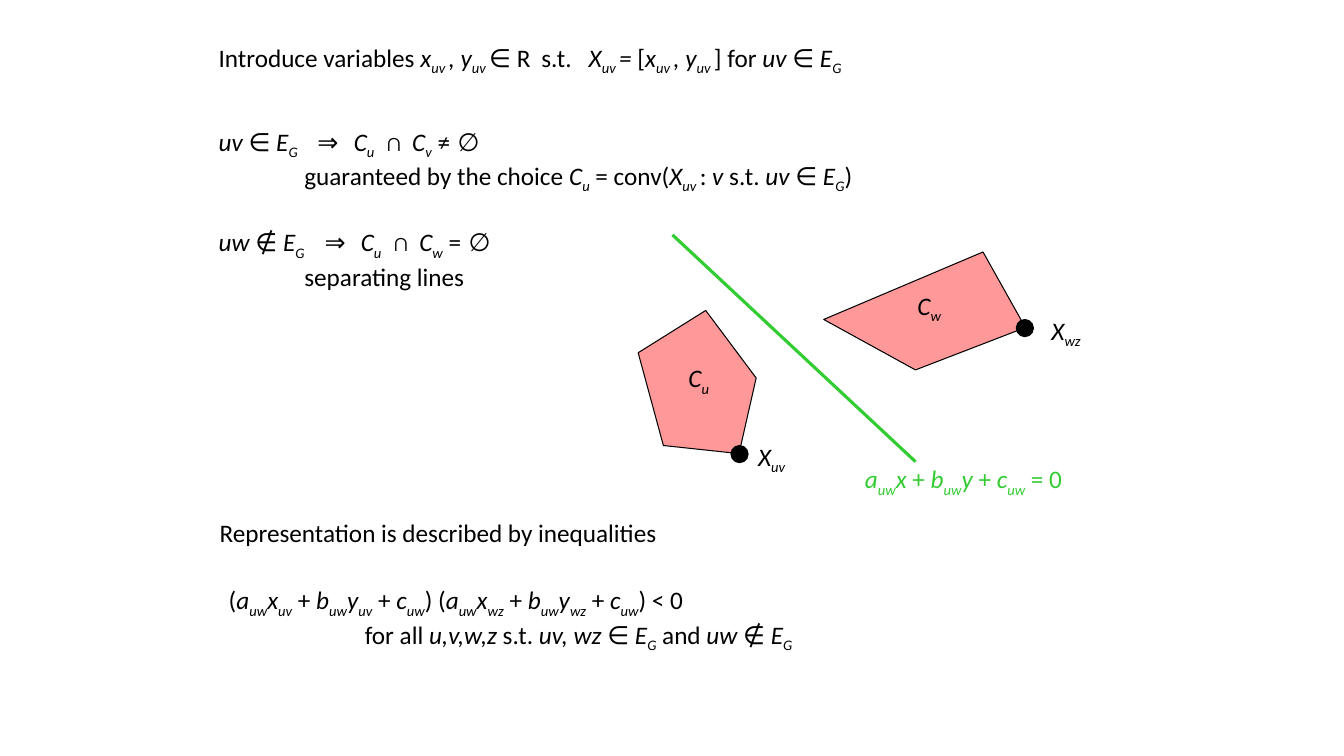
"""Build a slide on representing a graph by convex sets with separating lines."""
from lxml.etree import SubElement
from pptx import Presentation
from pptx.dml.color import RGBColor
from pptx.enum.shapes import MSO_CONNECTOR as Connector, MSO_SHAPE as Preset
from pptx.enum.text import MSO_AUTO_SIZE as AutoSize
from pptx.oxml.ns import qn
from pptx.util import Inches, Pt

BLACK = RGBColor(0, 0, 0)
PINK = RGBColor(0xFF, 0x99, 0x99)
GREEN = RGBColor(0x33, 0xCC, 0x33)

deck = Presentation()
deck.slide_width, deck.slide_height = Inches(13.33), Inches(7.5)
page = deck.slides.add_slide(deck.slide_layouts[6])
shapes = page.shapes


def add_text(left, top, width, lines, color=BLACK):
    """Add lines of (markup, indent, tab stops): *italic* and {subscript}."""
    height = 0.4 if len(lines) == 1 else 0.71
    box = shapes.add_textbox(Inches(left), Inches(top), Inches(width), Inches(height))
    frame = box.text_frame
    frame.word_wrap = False
    frame.auto_size = AutoSize.SHAPE_TO_FIT_TEXT
    for number, (markup, indent, stops) in enumerate(lines):
        para = frame.add_paragraph() if number else frame.paragraphs[0]
        properties = para._p.get_or_add_pPr()
        if indent:
            properties.set("marL", str(Inches(indent)))
            properties.set("indent", "0")
        if stops:
            tab_list = SubElement(properties, qn("a:tabLst"))
            for stop in stops:
                SubElement(tab_list, qn("a:tab"), pos=str(Inches(stop)), algn="l")
        para.font.size, para.font.name = Pt(18), "Calibri"
        for chunk_number, chunk in enumerate(markup.split("*")):
            for part_number, part in enumerate(chunk.replace("}", "{").split("{")):
                if part:
                    span = para.add_run()
                    span.text = part
                    span.font.italic = chunk_number % 2 == 1
                    span.font.color.rgb = color
                    if part_number % 2:
                        span._r.get_or_add_rPr().set("baseline", "-25000")


def paint(shape, fill):
    """Give a shape a plain fill and a thin black outline."""
    shape.shadow.inherit = False
    shape.fill.solid()
    shape.fill.fore_color.rgb = fill
    shape.line.color.rgb = BLACK
    shape.line.width = Pt(0.75)


add_text(2.07, 0.37, 6.51, [
    ("Introduce variables *x{uv }, y{uv }*∈ R\ts.t.\t*X{uv }= *[*x{uv }, y{uv }*] for "
     "*uv *∈* E{G}*", 0, (3.2, 3.67))])
add_text(2.07, 1.2, 6.65, [
    ("*uv *∈* E{G}*\t⇒\t*C{u}*\t∩\t*C{v}* ≠\t*∅*", 0, (0.98, 1.34, 1.65, 1.92, 2.37)),
    ("guaranteed by the choice *C{u}* = conv(*X{uv }*: *v *s.t.* uv *∈* E{G}*)", 0.85, ())])
add_text(2.07, 2.2, 3.09, [
    ("*uw *∉* E{G}*\t⇒\t*C{u}*\t∩\t*C{w}* =\t*∅*", 0, (1.05, 1.41, 1.72, 1.99, 2.48)),
    ("separating lines", 0.85, ())])

set_u = [(6.58, 4.42), (6.33, 3.5), (7, 3.08), (7.5, 3.75), (7.33, 4.5)]
set_w = [(9.08, 3.67), (8.17, 3.17), (9.75, 2.5), (10.17, 3.25)]
for corners in (set_u, set_w):
    points = [(Inches(x), Inches(y)) for x, y in corners]
    outline = shapes.build_freeform(*points[0])
    outline.add_line_segments(points[1:], close=True)
    paint(outline.convert_to_shape(), PINK)

separator = shapes.add_connector(
    Connector.STRAIGHT, Inches(6.67), Inches(2.33), Inches(9.08), Inches(4.58))
separator.line.color.rgb = GREEN
separator.line.width = Pt(2.25)
SubElement(separator._element.spPr, qn("a:effectLst"))
add_text(8.48, 4.55, 2.26, [("*a{uw}x* + *b{uw}y* + *c{uw}* = 0", 0, ())], GREEN)

add_text(2.08, 5.08, 4.59, [("Representation is described by inequalities", 0, ())])
factors = "".join(f"(*a{{uw}}x{{{edge}}}* + *b{{uw}}y{{{edge}}}* + *c{{uw}}*) "
                  for edge in ("uv", "wz"))
add_text(2.17, 5.75, 5.9, [
    (factors + "< 0", 0, ()),
    ("for all *u,v,w,z* s.t. *uv, wz *∈* E{G}* and *uw *∉* E{G}*", 1.35, ())])

for left, top in ((7.25, 4.42), (10.08, 3.17)):
    dot = shapes.add_shape(Preset.OVAL, Inches(left), Inches(top), Inches(0.17), Inches(0.17))
    paint(dot, BLACK)

labels = [("C", "u", 6.73, 3.55, 0.42), ("C", "w", 9, 2.83, 0.45),
          ("X", "uv", 7.42, 4.33, 0.49), ("X", "wz", 10.33, 3.08, 0.52)]
for letter, index, left, top, width in labels:
    add_text(left, top, width, [(f"*{letter}{{{index}}}*", 0, ())])

deck.save("out.pptx")
